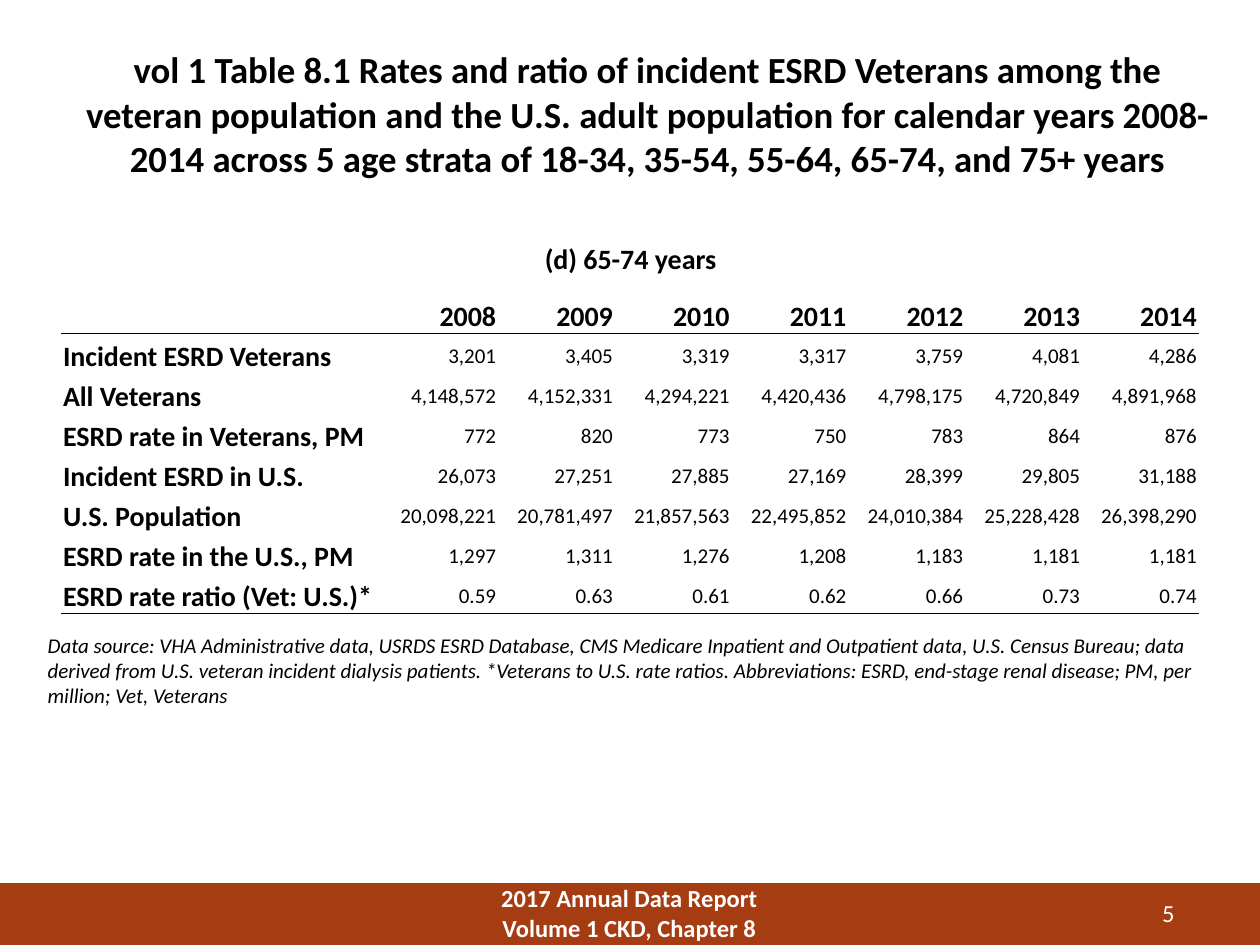
"""Build the slide with the 65-74 years table of incident ESRD rates."""
from lxml import etree
from pptx import Presentation
from pptx.dml.color import RGBColor
from pptx.enum.shapes import MSO_SHAPE
from pptx.enum.text import MSO_ANCHOR, PP_ALIGN
from pptx.oxml.ns import qn
from pptx.util import Inches, Pt

LEFT, CENTER, RIGHT = PP_ALIGN.LEFT, PP_ALIGN.CENTER, PP_ALIGN.RIGHT
TOP, MIDDLE = MSO_ANCHOR.TOP, MSO_ANCHOR.MIDDLE
RECTANGLE = MSO_SHAPE.RECTANGLE
BLACK, WHITE, RUST = "000000", "FFFFFF", "A63C12"


def color(value):
    """Turn a hex string into a colour."""
    return RGBColor.from_string(value)


def write(text_frame, text, size, align, bold=False, italic=False, ink=BLACK):
    """Fill a text frame and format its paragraphs and runs."""
    text_frame.text = text
    for paragraph in text_frame.paragraphs:
        paragraph.alignment = align
        for run in paragraph.runs:
            run.font.name = "Calibri"
            run.font.size = Pt(size)
            run.font.bold = bold
            run.font.italic = italic
            run.font.color.rgb = color(ink)


presentation = Presentation()
presentation.slide_width = Inches(10)
presentation.slide_height = Inches(7.5)
column = presentation.slide_width / 100
row = presentation.slide_height / 75
slide = presentation.slides.add_slide(presentation.slide_layouts[6])

footer_bar = slide.shapes.add_shape(
    RECTANGLE, 0, int(70.1 * row), int(100 * column), int(4.9 * row))
footer_bar.shadow.inherit = False
footer_bar.fill.solid()
footer_bar.fill.fore_color.rgb = color(RUST)
footer_bar.line.fill.background()

title = (
    "vol 1 Table 8.1 Rates and ratio of incident ESRD Veterans among the "
    "veteran population and the U.S. adult population for calendar years "
    "2008-2014 across 5 age strata of 18-34, 35-54, 55-64, 65-74, and 75+ years")
source_note = (
    "Data source: VHA Administrative data, USRDS ESRD Database, CMS Medicare "
    "Inpatient and Outpatient data, U.S. Census Bureau; data derived from U.S. "
    "veteran incident dialysis patients. *Veterans to U.S. rate ratios. "
    "Abbreviations: ESRD, end-stage renal disease; PM, per million; Vet, Veterans")
report_name = "2017 Annual Data Report\nVolume 1 CKD, Chapter 8"
text_boxes = [
    (report_name, 35.8, 69.6, 28.3, 5.4, 14, CENTER, TOP, True, False, WHITE),
    ("5", 84.2, 70.8, 10, 3, 14, RIGHT, TOP, False, False, WHITE),
    (title, 5.8, 2.8, 91.2, 12.4, 21, CENTER, MIDDLE, True, False, BLACK),
    ("(d) 65-74 years", 42.1, 18.7, 15.9, 3.7, 16, CENTER, TOP, True, False, BLACK),
    (source_note, 2.8, 49.7, 94.4, 7.1, 12, LEFT, TOP, False, True, BLACK),
]
for text, left, top, width, height, size, align, anchor, bold, italic, ink in text_boxes:
    text_box = slide.shapes.add_textbox(
        int(left * column), int(top * row), int(width * column), int(height * row))
    text_frame = text_box.text_frame
    text_frame.word_wrap = True
    text_frame.vertical_anchor = anchor
    write(text_frame, text, size, align, bold, italic, ink)

table_rows = [
    ["", "2008", "2009", "2010", "2011", "2012", "2013", "2014"],
    ["Incident ESRD Veterans",
     "3,201", "3,405", "3,319", "3,317", "3,759", "4,081", "4,286"],
    ["All Veterans", "4,148,572", "4,152,331", "4,294,221", "4,420,436",
     "4,798,175", "4,720,849", "4,891,968"],
    ["ESRD rate in Veterans, PM", "772", "820", "773", "750", "783", "864", "876"],
    ["Incident ESRD in U.S.",
     "26,073", "27,251", "27,885", "27,169", "28,399", "29,805", "31,188"],
    ["U.S. Population", "20,098,221", "20,781,497", "21,857,563", "22,495,852",
     "24,010,384", "25,228,428", "26,398,290"],
    ["ESRD rate in the U.S., PM",
     "1,297", "1,311", "1,276", "1,208", "1,183", "1,181", "1,181"],
    ["ESRD rate ratio (Vet: U.S.)*",
     "0.59", "0.63", "0.61", "0.62", "0.66", "0.73", "0.74"],
]
row_count, column_count = len(table_rows), len(table_rows[0])
table_width, label_width = 90.2 * column, 25.3 * column
table = slide.shapes.add_table(
    row_count, column_count, int(4.9 * column), int(23.3 * row),
    int(table_width), int(25.4 * row)).table
table.first_row = False
table.horz_banding = False
for index, table_column in enumerate(table.columns):
    year_width = (table_width - label_width) / (column_count - 1)
    table_column.width = int(year_width if index else label_width)

rules = {0: "a:lnB", 1: "a:lnT", row_count - 1: "a:lnB"}
for row_index, values in enumerate(table_rows):
    for column_index, value in enumerate(values):
        cell = table.cell(row_index, column_index)
        cell.fill.background()
        cell.vertical_anchor = MIDDLE
        cell.margin_left = cell.margin_right = cell.margin_top = Inches(0.01)
        cell.margin_bottom = 0
        heading = row_index == 0 or column_index == 0
        write(cell.text_frame, value, 16 if heading else 12,
              RIGHT if column_index else LEFT, heading)
        if value:
            cell.text_frame.paragraphs[0].line_spacing = 1.15
        if row_index in rules:
            border = etree.Element(qn(rules[row_index]), w=str(Pt(1)))
            fill = etree.SubElement(border, qn("a:solidFill"))
            etree.SubElement(fill, qn("a:srgbClr"), val=BLACK)
            cell._tc.get_or_add_tcPr().insert(0, border)

presentation.save("out.pptx")
